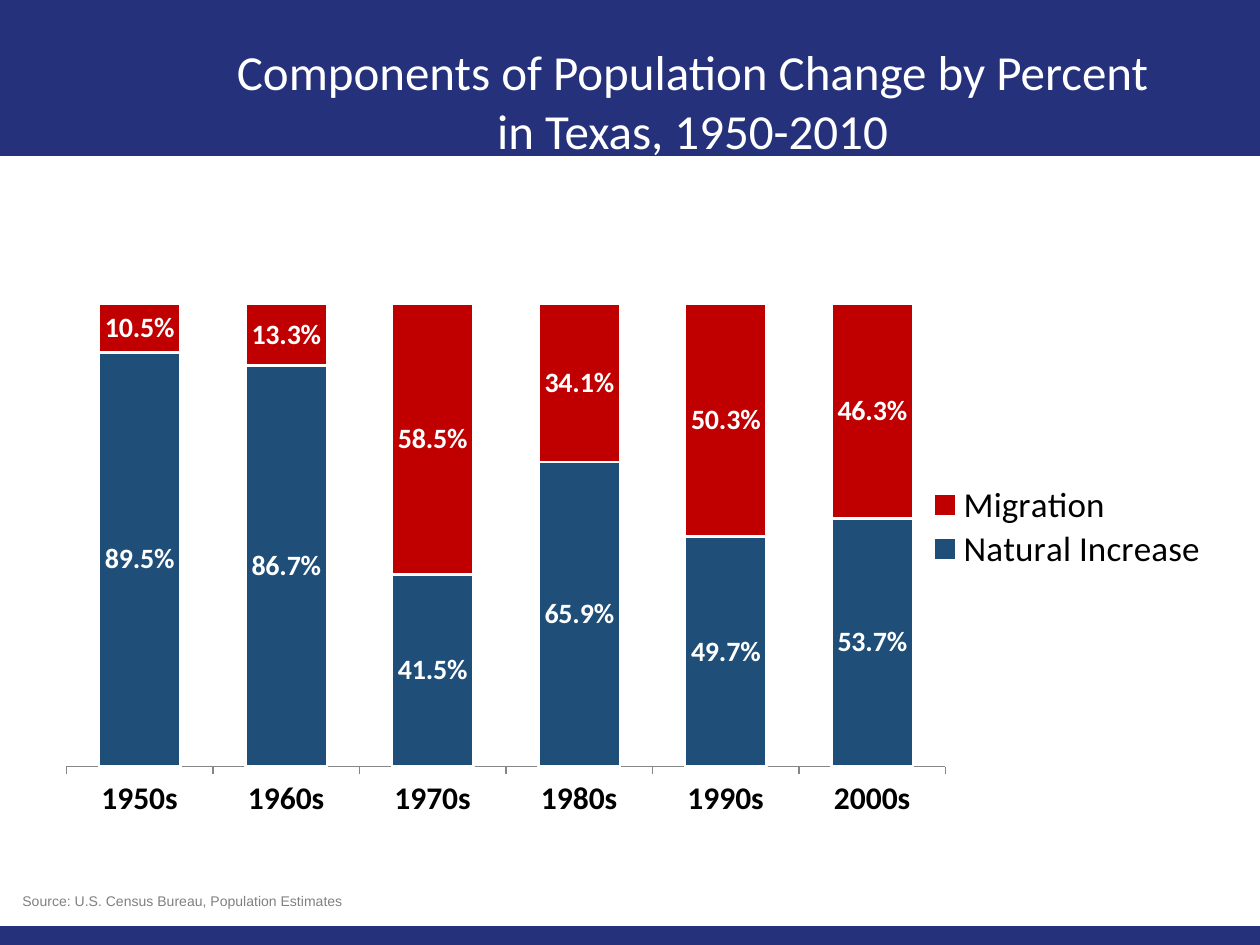
from lxml.etree import SubElement, QName
from pptx import Presentation
from pptx.chart.data import CategoryChartData
from pptx.dml.color import RGBColor
from pptx.enum.chart import XL_CHART_TYPE, XL_LEGEND_POSITION, XL_TICK_MARK
from pptx.enum.shapes import MSO_SHAPE
from pptx.enum.text import MSO_ANCHOR, MSO_AUTO_SIZE, PP_ALIGN
from pptx.oxml.ns import qn
from pptx.util import Pt

PX = 914400 / 126
HUES = {"band": "25327B", "natural": "1F4E79", "migrant": "C00000",
        "white": "FFFFFF", "black": "000000", "gray": "808080", "axis": "868686"}


def hue(name):
    return RGBColor.from_string(HUES[name])


def place(node, spot, index, inner=False):
    """Give a chart part a fixed spot, in fractions of the chart."""
    for old in node.findall(qn("c:layout")):
        node.remove(old)
    layout = node.makeelement(qn("c:layout"))
    node.insert(index, layout)
    manual = SubElement(layout, qn("c:manualLayout"))
    pairs = [("xMode", "edge"), ("yMode", "edge"), *zip("xywh", spot)]
    if inner:
        pairs.insert(0, ("layoutTarget", "inner"))
    for tag, value in pairs:
        SubElement(manual, qn("c:" + tag)).set("val", str(value))


class Deck:
    def __init__(self, wide, high):
        self.show = Presentation()
        self.show.slide_width, self.show.slide_height = self.box(wide, high)
        self.slide = self.show.slides.add_slide(self.show.slide_layouts[5])
        self.shapes = self.slide.shapes

    def box(self, *sizes):
        return [round(size * PX) for size in sizes]

    def style(self, font, size, color, bold=False, face="Calibri"):
        font.name, font.size, font.bold = face, Pt(size), bold
        font.color.rgb = hue(color)

    def band(self, *spot):
        bar = self.shapes.add_shape(MSO_SHAPE.RECTANGLE, *self.box(*spot))
        bar.shadow.inherit = False
        bar.fill.solid()
        bar.fill.fore_color.rgb = hue("band")
        bar.line.fill.background()

    def title(self, text, *spot):
        head = self.shapes.title
        head.left, head.top, head.width, head.height = self.box(*spot)
        # Bring the title in front of the band
        head.element.getparent().append(head.element)
        frame = head.text_frame
        frame.text = text
        frame.word_wrap = True
        frame.auto_size = MSO_AUTO_SIZE.NONE
        frame.vertical_anchor = MSO_ANCHOR.MIDDLE
        frame.paragraphs[0].alignment = PP_ALIGN.CENTER
        self.style(frame.paragraphs[0].runs[0].font, 28, "white")

    def note(self, text, *spot):
        frame = self.shapes.add_textbox(*self.box(*spot)).text_frame
        frame.text = text
        frame.word_wrap = True
        frame.auto_size = MSO_AUTO_SIZE.SHAPE_TO_FIT_TEXT
        self.style(frame.paragraphs[0].runs[0].font, 8, "gray", face="Arial")

    def chart(self, cats, rows, *spot):
        data = CategoryChartData(number_format="0.0%")
        data.categories = cats
        for name, _, values in rows:
            data.add_series(name, values)
        chart = self.shapes.add_chart(
            XL_CHART_TYPE.COLUMN_STACKED, *self.box(*spot), data).chart
        chart.has_title = False
        self.style(chart.font, 18, "black")

        # Columns and their labels
        plot = chart.plots[0]
        plot.gap_width, plot.overlap = 80, 100
        plot.vary_by_categories = False
        for series, (_, color, _) in zip(plot.series, rows):
            series.format.fill.solid()
            series.format.fill.fore_color.rgb = hue(color)
            series.format.line.color.rgb = hue("white")
            series.format.line.width = Pt(1.5)
            labels = series.data_labels
            labels.show_value = True
            labels.number_format = "0.0%"
            labels.number_format_is_linked = False
            self.style(labels.font, 16, "white", True)

        # Axes
        base, scale = chart.category_axis, chart.value_axis
        base.major_tick_mark = XL_TICK_MARK.OUTSIDE
        base.format.line.color.rgb = hue("axis")
        self.style(base.tick_labels.font, 18, "black", True)
        scale.visible = scale.has_major_gridlines = False
        scale.minimum_scale, scale.maximum_scale = 0, 1.2

        # Legend and plot positions
        chart.has_legend = True
        chart.legend.position = XL_LEGEND_POSITION.RIGHT
        chart.legend.include_in_layout = False
        self.style(chart.legend.font, 20, "black")
        root = chart.element
        place(root.find(".//" + qn("c:plotArea")), (0.02, 0.02, 0.72, 0.88), 0, True)
        place(root.find(".//" + qn("c:legend")), (0.72, 0.45, 0.24, 0.14), 1)


def main():
    deck = Deck(1260, 945)

    # Top and bottom bands
    deck.band(0, 0, 1260, 156)
    deck.band(0, 926, 1260, 19)

    # Stacked shares by decade
    decades = [f"{year}s" for year in range(1950, 2001, 10)]
    rows = [
        ("Natural Increase", "natural", (0.895, 0.867, 0.415, 0.659, 0.497, 0.537)),
        ("Migration", "migrant", (0.105, 0.133, 0.585, 0.341, 0.503, 0.463)),
    ]
    deck.chart(decades, rows, 42, 199, 1221, 631)

    # Title and source
    deck.title("Components of Population Change by Percent in Texas, 1950-2010",
               220, 32, 945, 136)
    deck.note("Source: U.S. Census Bureau, Population Estimates", 10, 886, 630, 30)
    deck.show.save("out.pptx")


if __name__ == "__main__":
    main()
